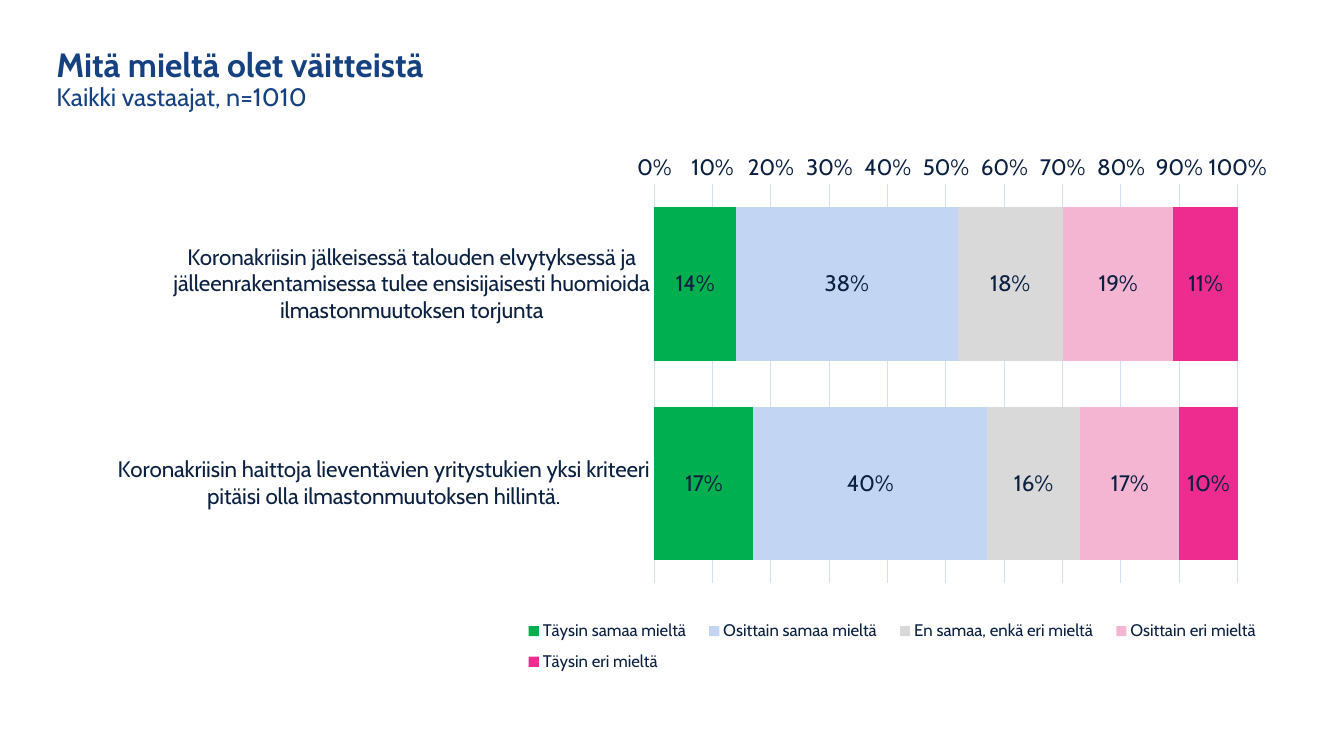
from lxml import etree
from pptx import Presentation
from pptx.chart.data import CategoryChartData
from pptx.dml.color import RGBColor
from pptx.enum.chart import XL_CHART_TYPE, XL_LEGEND_POSITION, XL_TICK_MARK
from pptx.enum.text import MSO_ANCHOR, MSO_AUTO_SIZE, PP_ALIGN
from pptx.oxml.ns import qn
from pptx.util import Inches, Pt

BAR_STACKED = XL_CHART_TYPE.BAR_STACKED_100
BAR_PLAIN_STACKED = XL_CHART_TYPE.BAR_STACKED
LEGEND_BOTTOM = XL_LEGEND_POSITION.BOTTOM
NO_TICK = XL_TICK_MARK.NONE
MIDDLE = MSO_ANCHOR.MIDDLE
NO_AUTOFIT = MSO_AUTO_SIZE.NONE
LEFT = PP_ALIGN.LEFT

FONT = "Cabin"
TITLE_BLUE = RGBColor(0x16, 0x41, 0x80)
NAVY = RGBColor(0x0B, 0x20, 0x40)
GRID_BLUE = RGBColor(0xD1, 0xE0, 0xF7)
GREEN = RGBColor(0x00, 0xB0, 0x50)
LIGHT_BLUE = RGBColor(0xC2, 0xD6, 0xF4)
GREY = RGBColor(0xD9, 0xD9, 0xD9)
LIGHT_PINK = RGBColor(0xF4, 0xB5, 0xD3)
PINK = RGBColor(0xEE, 0x2C, 0x90)

STATEMENTS = [
    "Koronakriisin jälkeisessä talouden elvytyksessä ja jälleenrakentamisessa "
    "tulee ensisijaisesti huomioida ilmastonmuutoksen torjunta",
    "Koronakriisin haittoja lieventävien yritystukien yksi kriteeri "
    "pitäisi olla ilmastonmuutoksen hillintä.",
]
ANSWERS = [
    ("Täysin samaa mieltä", (0.14, 0.17), GREEN),
    ("Osittain samaa mieltä", (0.38, 0.40), LIGHT_BLUE),
    ("En samaa, enkä eri mieltä", (0.18, 0.16), GREY),
    ("Osittain eri mieltä", (0.19, 0.17), LIGHT_PINK),
    ("Täysin eri mieltä", (0.11, 0.10), PINK),
]


def format_font(font, size, color, bold=False):
    font.name = FONT
    font.size = Pt(size)
    font.bold = bold
    font.color.rgb = color


def write_text(paragraph, text, size, color, bold=False):
    paragraph.alignment = LEFT
    paragraph.line_spacing = 0.9
    paragraph.space_before = Pt(0)
    run = paragraph.add_run()
    run.text = text
    format_font(run.font, size, color, bold)


def set_layout(parent, index, inner=False, **fractions):
    for layout in parent.findall(qn("c:layout")):
        parent.remove(layout)
    layout = etree.Element(qn("c:layout"))
    manual = etree.SubElement(layout, qn("c:manualLayout"))
    settings = {"layoutTarget": "inner"} if inner else {}
    settings.update(xMode="edge", yMode="edge", **fractions)
    for name, value in settings.items():
        etree.SubElement(manual, qn(f"c:{name}")).set("val", str(value))
    parent.insert(index, layout)


class SurveySlide:
    def __init__(self, presentation):
        self.slide = presentation.slides.add_slide(presentation.slide_layouts[5])

    def title(self, heading, subheading, left, top, width, height):
        shape = self.slide.shapes.title
        shape.left, shape.top = Inches(left), Inches(top)
        shape.width, shape.height = Inches(width), Inches(height)
        frame = shape.text_frame
        frame.word_wrap = True
        frame.auto_size = NO_AUTOFIT
        frame.vertical_anchor = MIDDLE
        frame.margin_bottom = Inches(0.33)
        write_text(frame.paragraphs[0], heading, 24, TITLE_BLUE, bold=True)
        write_text(frame.add_paragraph(), subheading, 18, TITLE_BLUE)

    def stacked_bars(self, categories, answers, left, top, width, height):
        data = CategoryChartData(number_format="0%")
        data.categories = categories
        for name, values, _ in answers:
            data.add_series(name, values)
        chart = self.slide.shapes.add_chart(
            BAR_PLAIN_STACKED, Inches(left), Inches(top),
            Inches(width), Inches(height), data).chart
        chart.has_title = False
        format_font(chart.font, 16, NAVY)
        plot = chart.plots[0]
        plot.gap_width = 30
        plot.overlap = 100
        plot.vary_by_categories = False
        for series, (_, _, color) in zip(plot.series, answers):
            series.format.fill.solid()
            series.format.fill.fore_color.rgb = color
            labels = series.data_labels
            labels.show_value = True
            labels.number_format = "0%"
            labels.number_format_is_linked = False
            format_font(labels.font, 16, NAVY)
        self.axes(chart)
        self.legend(chart)
        set_layout(chart.element.find(".//" + qn("c:plotArea")), 0, inner=True,
                   x=0.48, y=0.06, w=0.49, h=0.72)

    def axes(self, chart):
        for axis in (chart.category_axis, chart.value_axis):
            axis.major_tick_mark = NO_TICK
            axis.minor_tick_mark = NO_TICK
            format_font(axis.tick_labels.font, 16, NAVY)
        chart.category_axis.reverse_order = True
        value_axis = chart.value_axis
        value_axis.minimum_scale = 0
        value_axis.maximum_scale = 1
        value_axis.major_unit = 0.1
        value_axis.tick_labels.number_format = "0%"
        value_axis.tick_labels.number_format_is_linked = False
        value_axis.format.line.fill.background()
        value_axis.has_major_gridlines = True
        for line in (chart.category_axis.format.line,
                     value_axis.major_gridlines.format.line):
            line.color.rgb = GRID_BLUE
            line.width = Pt(0.75)

    def legend(self, chart):
        chart.has_legend = True
        chart.legend.position = LEGEND_BOTTOM
        chart.legend.include_in_layout = False
        format_font(chart.legend.font, 12, NAVY)
        set_layout(chart.element.find(".//" + qn("c:legend")), 1,
                   x=0.36, y=0.83, w=0.64, h=0.13)


def main():
    presentation = Presentation()
    presentation.slide_width = Inches(13.33)
    presentation.slide_height = Inches(7.5)
    survey = SurveySlide(presentation)
    survey.title("Mitä mieltä olet väitteistä", "Kaikki vastaajat, n=1010",
                 0.46, 0.21, 12.11, 1.45)
    survey.stacked_bars(STATEMENTS, ANSWERS, 0.82, 1.5, 11.81, 5.49)
    presentation.save("out.pptx")


if __name__ == "__main__":
    main()
